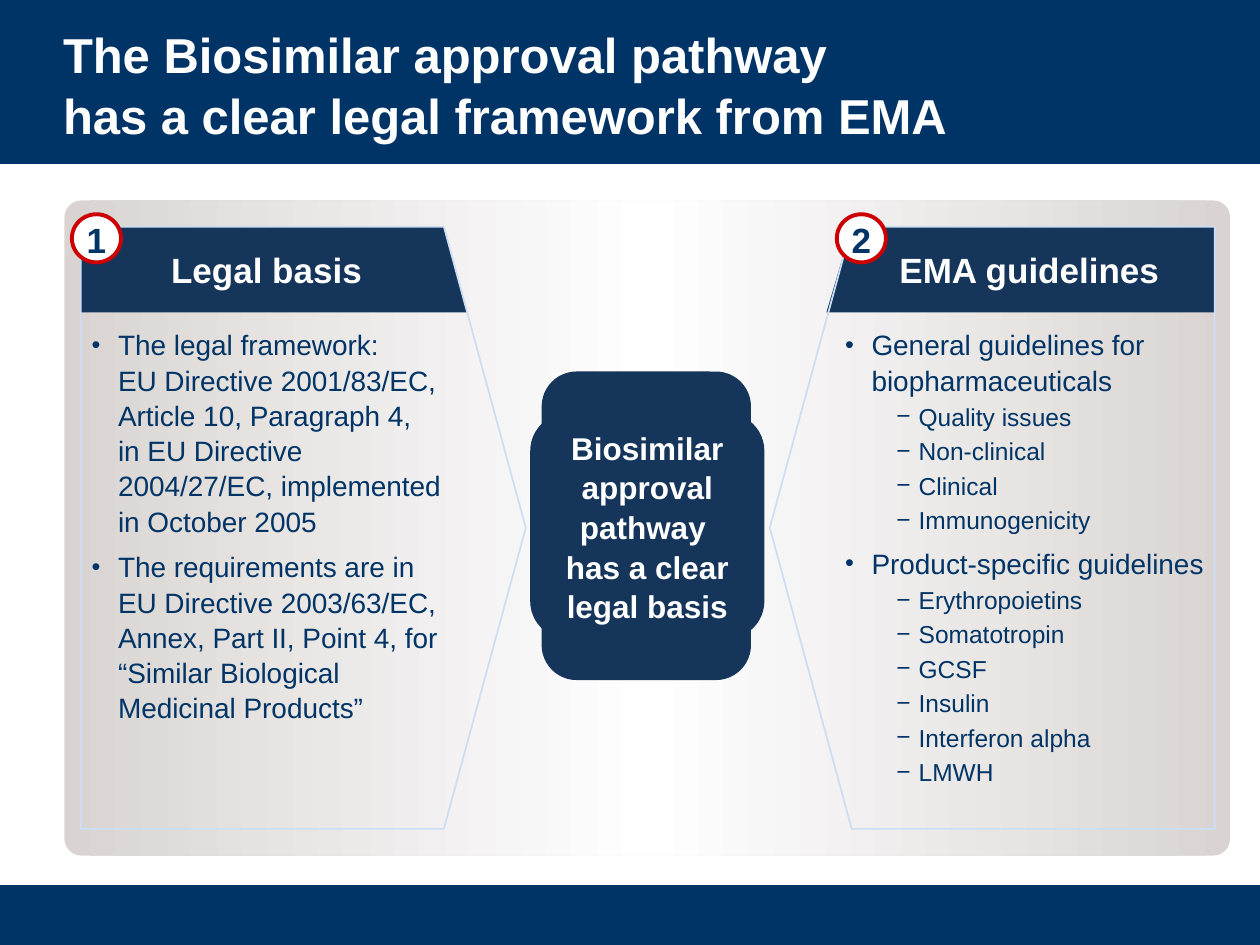
"""Build the slide on the legal framework of the biosimilar approval pathway."""
from copy import deepcopy
from dataclasses import dataclass

from pptx import Presentation
from pptx.dml.color import RGBColor
from pptx.enum.shapes import MSO_SHAPE
from pptx.enum.text import MSO_ANCHOR, MSO_AUTO_SIZE, PP_ALIGN
from pptx.oxml.ns import qn
from pptx.oxml.xmlchemy import OxmlElement
from pptx.util import Cm, Pt


@dataclass(frozen=True)
class Theme:
    font: str = "Arial"
    navy: str = "003366"
    block: str = "15355A"
    white: str = "FFFFFF"
    grey: str = "D9D4D2"
    outline: str = "CCDEF3"
    red: str = "CC0000"
    title: int = 28
    heading: int = 20
    core: int = 18
    bullet: int = 16
    dash: int = 14
    spacing: float = 1.05


THEME = Theme()
TITLE = "The Biosimilar approval pathway \nhas a clear legal framework from EMA"
CORE = ["Biosimilar", "approval", "pathway ", "has a clear", "legal basis"]
BANDS = [(0, 0, 25.4, 3.18, 0.75), (0, 3.12, 25.4, 0.18, 1), (0, 17.86, 25.4, 1.19, 0.75)]
COLUMNS = [
    {
        "number": "1", "heading": "Legal basis", "flip": False,
        "header": [(1.63, 6.3), (9.42, 6.3), (8.94, 4.57), (1.63, 4.57)],
        "label": (2.39, 5, 5.97, 0.84), "body": (1.6, 6.45, 7.82, 8.2),
        "plate": (1.63, 4.57, 8.97, 12.14), "badge": (1.45, 4.32, 0.99, 0.97),
        "points": [
            ("The legal framework: \nEU Directive 2001/83/EC, Article 10, Paragraph 4, \n"
             "in EU Directive 2004/27/EC, implemented in October 2005", []),
            ("The requirements are in EU Directive 2003/63/EC, Annex, Part II, Point 4, "
             "for “Similar Biological Medicinal Products”", []),
        ],
    },
    {
        "number": "2", "heading": "EMA guidelines", "flip": True,
        "header": [(24.49, 6.3), (16.66, 6.3), (17.17, 4.57), (24.49, 4.57)],
        "label": (17.27, 5, 6.96, 0.84), "body": (16.79, 6.45, 7.9, 9.22),
        "plate": (15.52, 4.57, 8.97, 12.14), "badge": (16.87, 4.32, 0.99, 0.97),
        "points": [
            ("General guidelines for biopharmaceuticals",
             ["Quality issues", "Non-clinical", "Clinical", "Immunogenicity"]),
            ("Product-specific guidelines",
             ["Erythropoietins", "Somatotropin", "GCSF", "Insulin", "Interferon alpha", "LMWH"]),
        ],
    },
]


def colour(value):
    return RGBColor.from_string(value)


def lengths(place):
    return [Cm(value) for value in place]


def paint(shape, fill=None, line=None, width=1):
    shape.shadow.inherit = False
    if fill:
        shape.fill.solid()
        shape.fill.fore_color.rgb = colour(fill)
    else:
        shape.fill.background()
    if line:
        shape.line.color.rgb = colour(line)
        shape.line.width = Pt(width)
    else:
        shape.line.fill.background()


def add_block(page, kind, place, fill=None, line=None, width=1, corner=None):
    shape = page.shapes.add_shape(kind, *lengths(place))
    paint(shape, fill, line, width)
    if corner is not None:
        shape.adjustments[0] = corner
    return shape


def set_frame(shape, anchor, margins=(0, 0), wrap=True):
    frame = shape.text_frame
    frame.auto_size = MSO_AUTO_SIZE.NONE
    frame.word_wrap = wrap
    frame.vertical_anchor = anchor
    frame.margin_left = frame.margin_right = Cm(margins[0])
    frame.margin_top = frame.margin_bottom = Cm(margins[1])
    return frame


def write(frame, text, size, ink, bold=True, align=PP_ALIGN.CENTER, before=0):
    first = frame.paragraphs[0]
    para = first if not first.runs else frame.add_paragraph()
    para.alignment = align
    para.line_spacing = THEME.spacing
    para.space_before = Pt(before)
    for index, line in enumerate(text.split("\n")):
        if index:
            para.add_line_break()
        span = para.add_run()
        span.text = line
        span.font.name = THEME.font
        span.font.size = Pt(size)
        span.font.bold = bold
        span.font.color.rgb = colour(ink)
    return para


def add_bullet(para, mark, left, hanging, percent=100):
    properties = para._p.get_or_add_pPr()
    properties.set("marL", str(Cm(left)))
    properties.set("indent", str(-Cm(hanging)))
    for tag, name, value in (("a:buSzPct", "val", str(percent * 1000)),
                             ("a:buFont", "typeface", THEME.font),
                             ("a:buChar", "char", mark)):
        child = OxmlElement(tag)
        child.set(name, value)
        properties.append(child)


def add_background(page):
    for *place, width in BANDS:
        add_block(page, MSO_SHAPE.RECTANGLE, place, THEME.navy, THEME.navy, width)
    panel = add_block(page, MSO_SHAPE.ROUNDED_RECTANGLE, (1.3, 4.04, 23.5, 13.21), corner=0.026)
    panel.fill.gradient()
    panel.fill.gradient_angle = 0
    stops = panel.element.spPr.find(".//" + qn("a:gsLst"))
    stops.append(deepcopy(stops[0]))
    shades = (THEME.grey, THEME.white, THEME.grey)
    for index, (stop, shade) in enumerate(zip(panel.fill.gradient_stops, shades)):
        stop.position = index / 2
        stop.color.rgb = colour(shade)


def add_title(page):
    title = page.shapes.title
    title.left, title.top, title.width, title.height = lengths((1.27, 0.53, 22.86, 2.39))
    frame = set_frame(title, MSO_ANCHOR.BOTTOM)
    write(frame, TITLE, THEME.title, THEME.white, align=PP_ALIGN.LEFT)
    title.element.getparent().append(title.element)


def add_column(page, column):
    start, *corners = [lengths(point) for point in column["header"]]
    builder = page.shapes.build_freeform(*start)
    builder.add_line_segments(corners, close=True)
    paint(builder.convert_to_shape(), THEME.block)

    label = page.shapes.add_textbox(*lengths(column["label"]))
    write(set_frame(label, MSO_ANCHOR.MIDDLE), column["heading"], THEME.heading, THEME.white)

    body = page.shapes.add_textbox(*lengths(column["body"]))
    frame = set_frame(body, MSO_ANCHOR.TOP, (0.25, 0.13))
    for point, details in column["points"]:
        para = write(frame, point, THEME.bullet, THEME.navy, False, PP_ALIGN.LEFT, 6)
        add_bullet(para, "•", 0.53, 0.53, 90)
        for detail in details:
            para = write(frame, detail, THEME.dash, THEME.navy, False, PP_ALIGN.LEFT, 2)
            para.level = 1
            add_bullet(para, "−", 1.48, 0.45)

    plate = add_block(page, MSO_SHAPE.PENTAGON, column["plate"], line=THEME.outline, corner=0.184)
    if column["flip"]:
        plate.element.spPr.get_or_add_xfrm().set("flipH", "1")

    badge = add_block(page, MSO_SHAPE.OVAL, column["badge"], THEME.white, THEME.red, 2.25)
    frame = set_frame(badge, MSO_ANCHOR.MIDDLE, wrap=False)
    write(frame, column["number"], THEME.heading, THEME.navy)


def add_core(page):
    for place in ((10.92, 7.49, 4.22, 6.22), (10.69, 8.33, 4.72, 4.55)):
        box = add_block(page, MSO_SHAPE.ROUNDED_RECTANGLE, place, THEME.block, corner=0.167)
    frame = set_frame(box, MSO_ANCHOR.MIDDLE, (0.25, 0.13))
    for line in CORE:
        write(frame, line, THEME.core, THEME.white)


def main():
    deck = Presentation()
    deck.slide_width, deck.slide_height = Cm(25.4), Cm(19.05)
    page = deck.slides.add_slide(deck.slide_layouts[5])
    add_background(page)
    add_title(page)
    for column in COLUMNS:
        add_column(page, column)
    add_core(page)
    deck.save("out.pptx")


if __name__ == "__main__":
    main()
